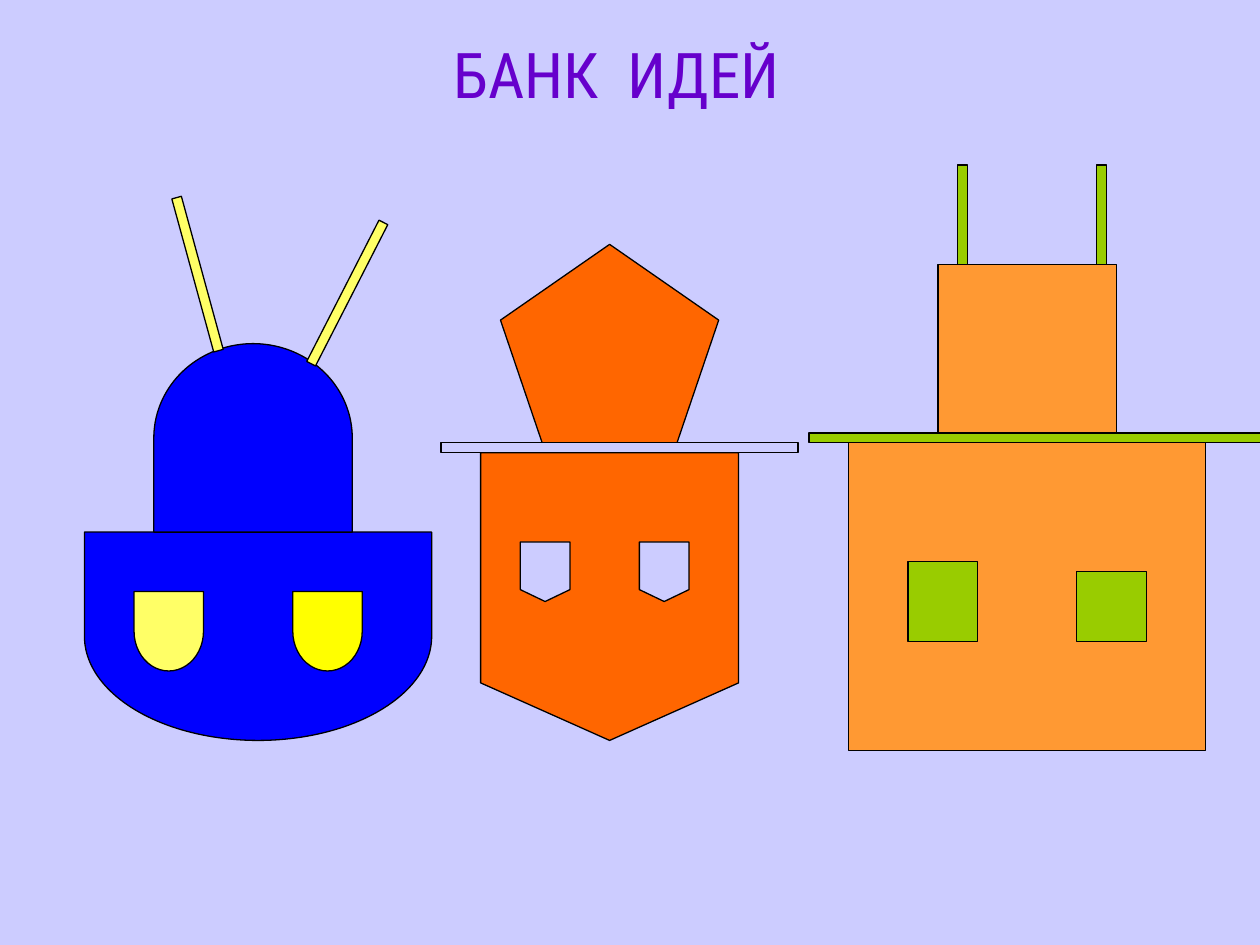
from pptx import Presentation
from pptx.dml.color import RGBColor
from pptx.enum.shapes import MSO_SHAPE
from pptx.enum.text import MSO_ANCHOR, PP_ALIGN
from pptx.util import Inches, Pt

BACKGROUND = RGBColor(0xCC, 0xCC, 0xFF)
BLACK = RGBColor(0x00, 0x00, 0x00)
PURPLE = RGBColor(0x66, 0x00, 0xCC)
BLUE = RGBColor(0x00, 0x00, 0xFF)
PALE_YELLOW = RGBColor(0xFF, 0xFF, 0x66)
YELLOW = RGBColor(0xFF, 0xFF, 0x00)
ORANGE = RGBColor(0xFF, 0x66, 0x00)
LIGHT_ORANGE = RGBColor(0xFF, 0x99, 0x33)
GREEN = RGBColor(0x99, 0xCC, 0x00)

RECT = MSO_SHAPE.RECTANGLE
ARCH = MSO_SHAPE.FLOWCHART_DELAY
SHIELD = MSO_SHAPE.FLOWCHART_OFFPAGE_CONNECTOR
PENTAGON = MSO_SHAPE.REGULAR_PENTAGON

# The figures are drawn on a grid of square cells, 127 to the slide's width
CELL = 10 / 127
GRID_TOP = 1.31


def add_part(slide, origin, kind, box, fill, rotation=0):
    """Place a part by its column, row, width and height in grid cells.

    For quarter turns the box is the one seen after turning.
    """
    column, row, width, height = box
    if rotation in (90, 270):
        column += (width - height) / 2
        row += (height - width) / 2
        width, height = height, width
    part = slide.shapes.add_shape(
        kind, Inches(origin + column * CELL), Inches(GRID_TOP + row * CELL),
        Inches(width * CELL), Inches(height * CELL))
    part.rotation = rotation
    part.shadow.inherit = False
    part.fill.solid()
    part.fill.fore_color.rgb = fill
    part.line.color.rgb = BLACK
    part.line.width = Pt(0.75)


def add_figure(slide, origin, parts):
    for part in parts:
        add_part(slide, origin, *part)


def write_text(frame, text, *, font, size, color, align):
    paragraph = frame.paragraphs[0]
    paragraph.alignment = align
    run = paragraph.add_run()
    run.text = text
    run.font.name = font
    run.font.size = Pt(size)
    run.font.color.rgb = color


def add_title(slide):
    title = slide.shapes.title
    title.left, title.top = Inches(2.5), Inches(0.23)
    title.width, title.height = Inches(4.79), Inches(1.3)
    title.text_frame.word_wrap = False
    title.text_frame.vertical_anchor = MSO_ANCHOR.TOP
    write_text(title.text_frame, "БАНК  ИДЕЙ", font="Roboto Condensed",
               size=36, color=PURPLE, align=PP_ALIGN.CENTER)


def main():
    prs = Presentation()
    prs.slide_width, prs.slide_height = Inches(10), Inches(7.5)
    slide = prs.slides.add_slide(prs.slide_layouts[5])
    slide.background.fill.solid()
    slide.background.fill.fore_color.rgb = BACKGROUND

    # Blue figure: face, dome, antennas, eyes
    add_figure(slide, 0.67, [
        (ARCH, (0, 37, 35, 21), BLUE, 90),
        (ARCH, (7, 18, 20, 19), BLUE, 270),
        (RECT, (3.4, 10.5, 16, 1), PALE_YELLOW, 74.7),
        (RECT, (18.5, 12.4, 16, 1), PALE_YELLOW, 297.1),
        (ARCH, (5, 43, 7, 8), PALE_YELLOW, 90),
        (ARCH, (21, 43, 7, 8), YELLOW, 90),
    ])

    # Orange figure: face, crown, eyes, brim
    add_figure(slide, 3.5, [
        (SHIELD, (4, 29, 26, 29), ORANGE),
        (PENTAGON, (6, 8, 22, 20), ORANGE),
        (SHIELD, (8, 38, 5, 6), BACKGROUND),
        (SHIELD, (20, 38, 5, 6), BACKGROUND),
        (RECT, (0, 28, 36, 1), BACKGROUND),
    ])

    # Square figure: face, eyes, crown, antennas, brim
    add_figure(slide, 6.42, [
        (RECT, (4, 28, 36, 31), LIGHT_ORANGE),
        (RECT, (10, 40, 7, 8), GREEN),
        (RECT, (27, 41, 7, 7), GREEN),
        (RECT, (13, 10, 18, 17), LIGHT_ORANGE),
        (RECT, (29, 0, 1, 10), GREEN),
        (RECT, (15, 0, 1, 10), GREEN),
        (RECT, (0, 27, 45.5, 1), GREEN),
    ])

    add_title(slide)
    prs.save("out.pptx")


if __name__ == "__main__":
    main()
